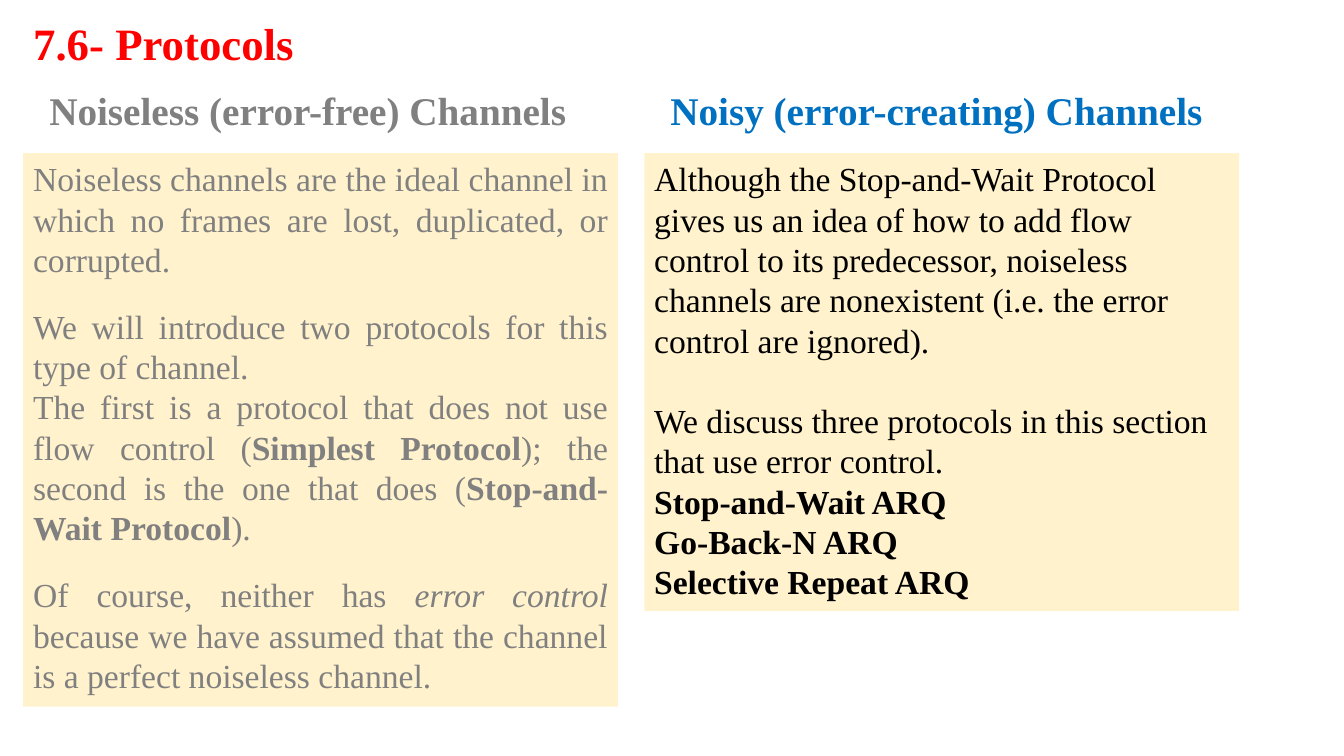
from dataclasses import dataclass

from pptx import Presentation
from pptx import util as u
from pptx.dml import color
from pptx.enum import shapes, text


@dataclass(frozen=True)
class Theme:
    font: str = "Times New Roman"
    title: str = "FF0000"
    muted: str = "808080"
    accent: str = "0070C0"
    body: str = "000000"
    panel: str = "FFF2CC"
    title_size: float = 32
    heading_size: float = 28
    body_size: float = 24
    small_gap: float = 19
    line_gap: float = 28.8


THEME = Theme()
JUSTIFY = text.PP_ALIGN.JUSTIFY
LEFT = text.PP_ALIGN.LEFT
BOLD = {"bold": True}
ITALIC = {"italic": True}

NOISELESS = [
    (0, [("Noiseless channels are the ideal channel in which no frames are lost, "
          "duplicated, or corrupted.", {})]),
    (THEME.small_gap, [("We will introduce two protocols for this type of channel.", {})]),
    (0, [("The first is a protocol that does not use flow control (", {}),
         ("Simplest Protocol", BOLD),
         ("); the second is the one that does (", {}),
         ("Stop-and-Wait Protocol", BOLD),
         (").", {})]),
    (THEME.small_gap, [("Of course, neither has ", {}),
                       ("error control ", ITALIC),
                       ("because we have assumed that the channel is a perfect "
                        "noiseless channel.", {})]),
]
NOISY = [
    (0, [("Although the Stop-and-Wait Protocol gives us an idea of how to add flow control "
          "to its predecessor, noiseless channels are nonexistent (i.e. the error control "
          "are ignored).", {})]),
    (THEME.line_gap, [("We discuss three protocols in this section that use error control.", {})]),
    *[(0, [(protocol, BOLD)])
      for protocol in ("Stop-and-Wait ARQ", "Go-Back-N ARQ", "Selective Repeat ARQ")],
]


def set_all(target, values):
    for name, value in values.items():
        setattr(target, name, value)


def write(holder, paragraphs, size, tint, align, spacing=1.0):
    frame = holder.text_frame
    set_all(frame, {"word_wrap": True,
                    "auto_size": text.MSO_AUTO_SIZE.SHAPE_TO_FIT_TEXT,
                    "vertical_anchor": text.MSO_ANCHOR.TOP})
    for index, (gap, runs) in enumerate(paragraphs):
        paragraph = frame.add_paragraph() if index else frame.paragraphs[0]
        set_all(paragraph, {"alignment": align, "line_spacing": spacing,
                            "space_before": u.Pt(gap)})
        for words, style in runs:
            run = paragraph.add_run()
            run.text = words
            set_all(run.font, {"name": THEME.font, "size": u.Pt(size), **style})
            run.font.color.rgb = color.RGBColor.from_string(tint)


def add_heading(slide, box, words, size, tint, spacing=1.0):
    heading = slide.shapes.add_textbox(*map(u.Inches, box))
    write(heading, [(0, [(words, BOLD)])], size, tint, JUSTIFY, spacing)


def add_panel(slide, box, paragraphs, tint, align):
    panel = slide.shapes.add_shape(shapes.MSO_SHAPE.RECTANGLE, *map(u.Inches, box))
    panel.shadow.inherit = False
    panel.fill.solid()
    panel.fill.fore_color.rgb = color.RGBColor.from_string(THEME.panel)
    panel.line.fill.background()
    write(panel, paragraphs, THEME.body_size, tint, align)


def main():
    deck = Presentation()
    set_all(deck, {"slide_width": u.Inches(13.33), "slide_height": u.Inches(7.5)})
    slide = deck.slides.add_slide(deck.slide_layouts[6])
    add_heading(slide, (0.23, -0.16, 12.39, 0.82), "7.6- Protocols",
                THEME.title_size, THEME.title, 1.5)
    channels = [
        (0.23, "Noiseless (error-free) Channels", THEME.muted,
         NOISELESS, THEME.muted, 5.49, JUSTIFY),
        (6.39, "Noisy (error-creating) Channels", THEME.accent,
         NOISY, THEME.body, 4.54, LEFT),
    ]
    for left, name, name_tint, paragraphs, tint, height, align in channels:
        add_heading(slide, (left + 0.16, 0.81, 5.58, 0.57), name,
                    THEME.heading_size, name_tint)
        add_panel(slide, (left, 1.52, 5.9, height), paragraphs, tint, align)
    deck.save("out.pptx")


if __name__ == "__main__":
    main()
